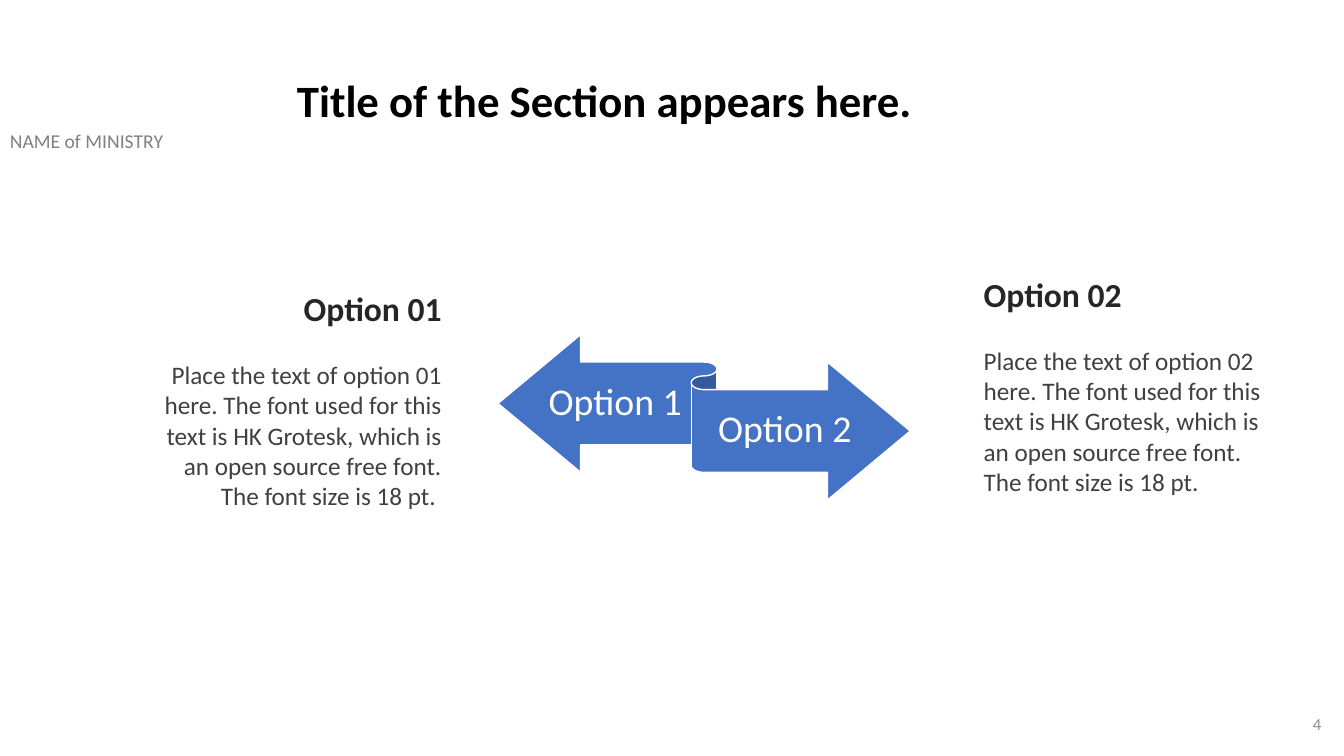
"""Build a section slide that sets two options on either side of a ribbon."""
from pptx import Presentation
from pptx import util as u
from pptx.dml.color import RGBColor
from pptx.enum import shapes, text

COLORS = {"title": "000000", "heading": "262626", "body": "404040", "ministry": "808080",
          "number": "8C8C8C", "ribbon": "4472C4", "white": "FFFFFF"}
ALIGN = text.PP_ALIGN
MIDDLE = text.MSO_ANCHOR.MIDDLE


def add_text(tf, content, size, color, bold=False, align=ALIGN.LEFT, spacing=None, before=0):
    """Write one formatted paragraph into a text frame."""
    p = tf.paragraphs[0] if not tf.text else tf.add_paragraph()
    p.alignment = align
    if spacing:
        p.line_spacing = spacing
    if before:
        p.space_before = u.Pt(before)
    r = p.add_run()
    r.text = content
    r.font.name = "Calibri"
    r.font.size = u.Pt(size)
    r.font.bold = bold
    r.font.color.rgb = RGBColor.from_string(COLORS[color])


class Deck:
    """Hold the style and the current slide."""

    def __init__(self):
        """Start a widescreen presentation with one blank slide."""
        self.prs = Presentation()
        self.prs.slide_width, self.prs.slide_height = u.Cm(33.87), u.Cm(19.05)
        self.s = self.prs.slides.add_slide(self.prs.slide_layouts[6])

    def box(self, at, anchor=text.MSO_ANCHOR.TOP, insets=None):
        """Add a wrapping text box and return its frame."""
        tf = self.s.shapes.add_textbox(*map(u.Cm, at)).text_frame
        tf.word_wrap = True
        tf.vertical_anchor = anchor
        if insets:
            tf.margin_left, tf.margin_top, tf.margin_right, tf.margin_bottom = map(u.Cm, insets)
        return tf

    def label(self, at, content, size, color, anchor=text.MSO_ANCHOR.TOP, insets=None, **style):
        """Add a text box with a single paragraph."""
        add_text(self.box(at, anchor, insets), content, size, color, **style)

    def ribbon(self, at):
        """Add the two-way arrow ribbon."""
        sp = self.s.shapes.add_shape(shapes.MSO_SHAPE.LEFT_RIGHT_RIBBON, *map(u.Cm, at))
        sp.shadow.inherit = False
        sp.fill.solid()
        sp.fill.fore_color.rgb = RGBColor.from_string(COLORS["ribbon"])
        sp.line.color.rgb = RGBColor.from_string(COLORS["white"])
        sp.line.width = u.Pt(1)

    def arrow_label(self, at, content):
        """Add the caption of one ribbon arrow."""
        self.label(at, content, 27, "white", anchor=MIDDLE, insets=(0, 0.25, 0, 0.28),
                   align=ALIGN.CENTER, spacing=0.9)

    def option(self, at, heading, body, align):
        """Add a heading with its description."""
        tf = self.box(at)
        add_text(tf, heading, 24, "heading", bold=True, align=align)
        add_text(tf, body, 18, "body", align=align, before=22)


def main():
    """Build and save the slide."""
    deck = Deck()
    body = ("Place the text of option {} here. The font used for this text is HK Grotesk, "
            "which is an open source free font. The font size is 18 pt.")
    deck.label((0, 3.12, 7.37, 0.86), "NAME of MINISTRY", 14, "ministry")
    deck.ribbon((12.55, 8.43, 10.39, 4.17))
    deck.arrow_label((13.79, 9.17, 3.43, 2.03), "Option 1")
    deck.arrow_label((17.75, 9.83, 4.06, 2.03), "Option 2")
    deck.option((3.63, 7.14, 7.75, 7.44), "Option 01", body.format("01") + " ", ALIGN.RIGHT)
    deck.option((24.54, 6.78, 7.49, 7.44), "Option 02", body.format("02"), ALIGN.LEFT)
    deck.label((6.73, 1.85, 17.27, 2.72), "Title of the Section appears here. ", 32, "title",
               bold=True, align=ALIGN.CENTER, spacing=0.9)
    deck.label((25.93, 17.73, 7.62, 1.02), "4", 12, "number", anchor=MIDDLE, align=ALIGN.RIGHT)
    deck.prs.save("out.pptx")


if __name__ == "__main__":
    main()
